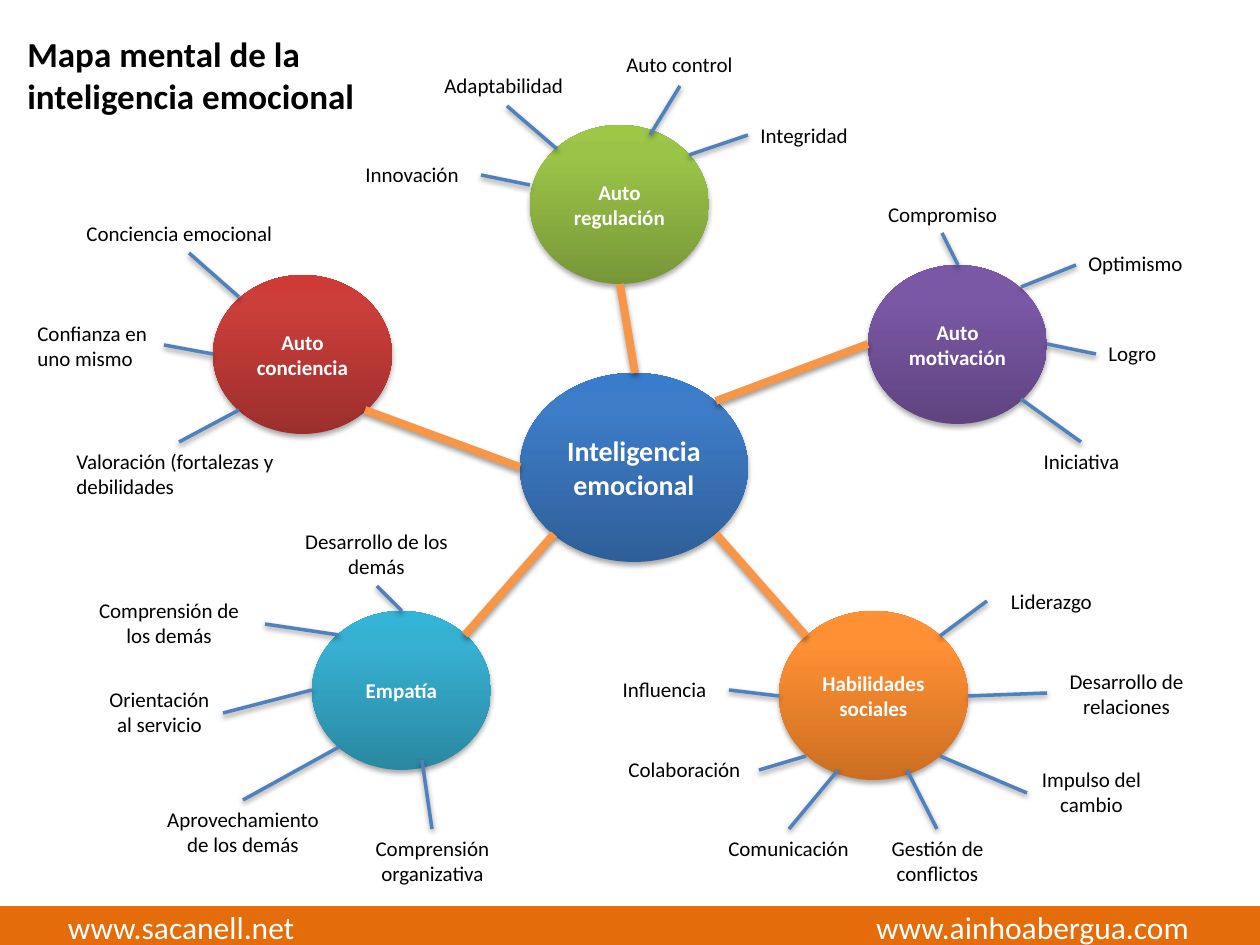
from copy import deepcopy

from lxml.etree import SubElement
from pptx import Presentation
from pptx.dml.color import RGBColor
from pptx.enum.shapes import MSO_CONNECTOR, MSO_SHAPE
from pptx.enum.text import MSO_ANCHOR, MSO_AUTO_SIZE, PP_ALIGN
from pptx.oxml.ns import qn
from pptx.util import Emu, Pt

SCALE = 914400 / 126
LEFT, CENTER = PP_ALIGN.LEFT, PP_ALIGN.CENTER

COLORS = {
    "text": "000000",
    "white": "FFFFFF",
    "footer": "E46C0A",
    "twig": "4F81BD",
    "trunk": "F79646",
}

GRADIENTS = {
    "blue": ("2F5F99", "3D7CC7", "3A7CCB"),
    "orange": ("CC6E20", "FF9034", "FF9136"),
    "aqua": ("2A88A2", "37B1D2", "34B4D6"),
    "purple": ("5F4480", "7B58A6", "7C57A8"),
    "green": ("779737", "9BC348", "9DC746"),
    "red": ("9C2F2D", "CB3E3A", "CE3B37"),
}

FORMATS = {
    "title": {"size": Pt(20), "bold": True},
    "core": {"size": Pt(16), "bold": True},
    "hub": {"size": Pt(12), "bold": True},
    "label": {"size": Pt(12)},
    "footer": {"size": Pt(18)},
}

LINE_HEIGHTS = {1: 38, 2: 63}

# Hub: name, gradient, box, trunk, then twigs as label, left, top, width, lines, align, line ends
BRANCHES = [
    ("Habilidades sociales", "orange", (779, 611, 189, 169), (806, 636, 716, 534), [
        ("Liderazgo", 987, 582, 129, 1, CENTER, (940, 636, 987, 601)),
        ("Desarrollo de relaciones", 1047, 662, 159, 2, CENTER, (968, 696, 1047, 693)),
        ("Impulso del cambio", 1027, 760, 129, 2, CENTER, (940, 756, 1027, 793)),
        ("Gestión de conflictos", 858, 829, 159, 2, CENTER, (907, 770, 937, 829)),
        ("Comunicación", 709, 829, 159, 1, CENTER, (838, 770, 789, 829)),
        ("Colaboración", 610, 750, 149, 1, CENTER, (806, 756, 759, 770)),
        ("Influencia", 600, 670, 129, 1, CENTER, (779, 696, 729, 690)),
    ]),
    ("Empatía", "aqua", (312, 611, 179, 159), (465, 635, 554, 534), [
        ("Desarrollo de los demás", 292, 522, 169, 2, CENTER, (377, 586, 402, 611)),
        ("Comprensión de los demás", 74, 591, 190, 2, CENTER, (265, 624, 339, 635)),
        ("Orientación al servicio", 95, 680, 129, 2, CENTER, (223, 713, 312, 690)),
        ("Aprovechamiento de los demás", 144, 800, 198, 2, CENTER, (339, 747, 243, 800)),
        ("Comprensión organizativa", 343, 829, 179, 2, CENTER, (422, 760, 432, 829)),
    ]),
    ("Auto motivación", "purple", (868, 265, 179, 159), (716, 401, 868, 344), [
        ("Compromiso", 858, 195, 169, 1, CENTER, (958, 265, 942, 233)),
        ("Optimismo", 1076, 244, 129, 1, LEFT, (1021, 287, 1076, 265)),
        ("Logro", 1096, 334, 129, 1, LEFT, (1047, 344, 1096, 354)),
        ("Iniciativa", 1017, 442, 129, 1, CENTER, (1021, 399, 1081, 442)),
    ]),
    ("Auto regulación", "green", (530, 125, 179, 159), (635, 373, 620, 284), [
        ("Innovación", 353, 155, 129, 1, LEFT, (530, 185, 481, 175)),
        ("Adaptabilidad", 432, 66, 149, 1, LEFT, (507, 106, 557, 149)),
        ("Auto control", 610, 45, 139, 1, CENTER, (650, 135, 680, 86)),
        ("Integridad", 748, 116, 149, 1, LEFT, (748, 135, 689, 155)),
    ]),
    ("Auto conciencia", "red", (213, 275, 179, 159), (520, 467, 365, 410), [
        ("Conciencia emocional", 74, 214, 228, 1, LEFT, (239, 297, 189, 253)),
        ("Confianza en uno mismo", 25, 314, 139, 2, LEFT, (164, 345, 213, 354)),
        ("Valoración (fortalezas y debilidades", 64, 442, 228, 2, LEFT, (239, 410, 179, 442)),
    ]),
]


def px(*lengths):
    """Turn pixel lengths into EMU."""
    return [Emu(round(length * SCALE)) for length in lengths]


def rgb(name):
    """Look up a named colour."""
    return RGBColor.from_string(COLORS[name])


def write(frame, text, style, color, align):
    """Fill a text frame with one formatted paragraph."""
    frame.word_wrap = True
    paragraph = frame.paragraphs[0]
    paragraph.alignment = align
    run = paragraph.add_run()
    run.text = text
    run.font.name = "Calibri"
    run.font.color.rgb = rgb(color)
    for attribute, value in FORMATS[style].items():
        setattr(run.font, attribute, value)
    return paragraph


def cast_shadow(properties, distance, opacity):
    """Give shape properties a soft shadow straight below."""
    effects = properties.find(qn("a:effectLst"))
    if effects is None:
        effects = SubElement(properties, qn("a:effectLst"))
    shadow = SubElement(effects, qn("a:outerShdw"), blurRad="40000", dist=str(distance),
                        dir="5400000", rotWithShape="0")
    black = SubElement(shadow, qn("a:srgbClr"), val=COLORS["text"])
    SubElement(black, qn("a:alpha"), val=str(opacity * 1000))


def add_bubble(slide, text, gradient, box, style):
    """Draw a shaded ellipse with its name."""
    bubble = slide.shapes.add_shape(MSO_SHAPE.OVAL, *px(*box))
    bubble.shadow.inherit = False
    bubble.line.fill.background()
    bubble.fill.gradient()
    bubble.fill.gradient_angle = 90
    properties = bubble.element.spPr
    stops = properties.find(".//" + qn("a:gsLst"))
    stops.append(deepcopy(stops[0]))
    for stop, position, shade in zip(bubble.fill.gradient_stops, (0, 0.8, 1), GRADIENTS[gradient]):
        stop.position = position
        stop.color.rgb = RGBColor.from_string(shade)
    cast_shadow(properties, 23000, 35)
    bubble.text_frame.vertical_anchor = MSO_ANCHOR.MIDDLE
    write(bubble.text_frame, text, style, "white", CENTER)


def add_label(slide, text, box, style, align):
    """Place a black text box."""
    frame = slide.shapes.add_textbox(*px(*box)).text_frame
    frame.auto_size = MSO_AUTO_SIZE.SHAPE_TO_FIT_TEXT
    write(frame, text, style, "text", align)


def add_link(slide, ends, color, width):
    """Draw a shadowed straight line."""
    link = slide.shapes.add_connector(MSO_CONNECTOR.STRAIGHT, *px(*ends))
    link.line.color.rgb = rgb(color)
    link.line.width = Pt(width)
    cast_shadow(link.element.spPr, 20000, 38)


def add_footer(slide, text):
    """Draw the bottom band with its two tabbed addresses."""
    band = slide.shapes.add_shape(MSO_SHAPE.RECTANGLE, *px(0, 908, 1260, 37))
    band.shadow.inherit = False
    band.fill.solid()
    band.fill.fore_color.rgb = rgb("footer")
    band.line.color.rgb = rgb("footer")
    band.line.width = Pt(2)
    frame = band.text_frame
    frame.vertical_anchor = MSO_ANCHOR.MIDDLE
    frame.margin_left, frame.margin_right, tab = px(68, 60, 1121)
    paragraph = write(frame, text, "footer", "white", LEFT)
    tabs = SubElement(paragraph._p.get_or_add_pPr(), qn("a:tabLst"))
    SubElement(tabs, qn("a:tab"), pos=str(tab), algn="r")


def main():
    """Build the mind map and save it."""
    deck = Presentation()
    deck.slide_width, deck.slide_height = px(1260, 945)
    slide = deck.slides.add_slide(deck.slide_layouts[6])
    add_footer(slide, "www.sacanell.net\twww.ainhoabergua.com")
    add_bubble(slide, "Inteligencia emocional", "blue", (520, 373, 228, 189), "core")
    for hub, gradient, box, trunk, twigs in BRANCHES:
        add_bubble(slide, hub, gradient, box, "hub")
        for label, left, top, width, lines, align, ends in twigs:
            add_label(slide, label, (left, top, width, LINE_HEIGHTS[lines]), "label", align)
            add_link(slide, ends, "twig", 2)
        add_link(slide, trunk, "trunk", 4.5)
    add_label(slide, "Mapa mental de la inteligencia emocional", (15, 26, 367, 97), "title", LEFT)
    deck.save("out.pptx")


if __name__ == "__main__":
    main()
